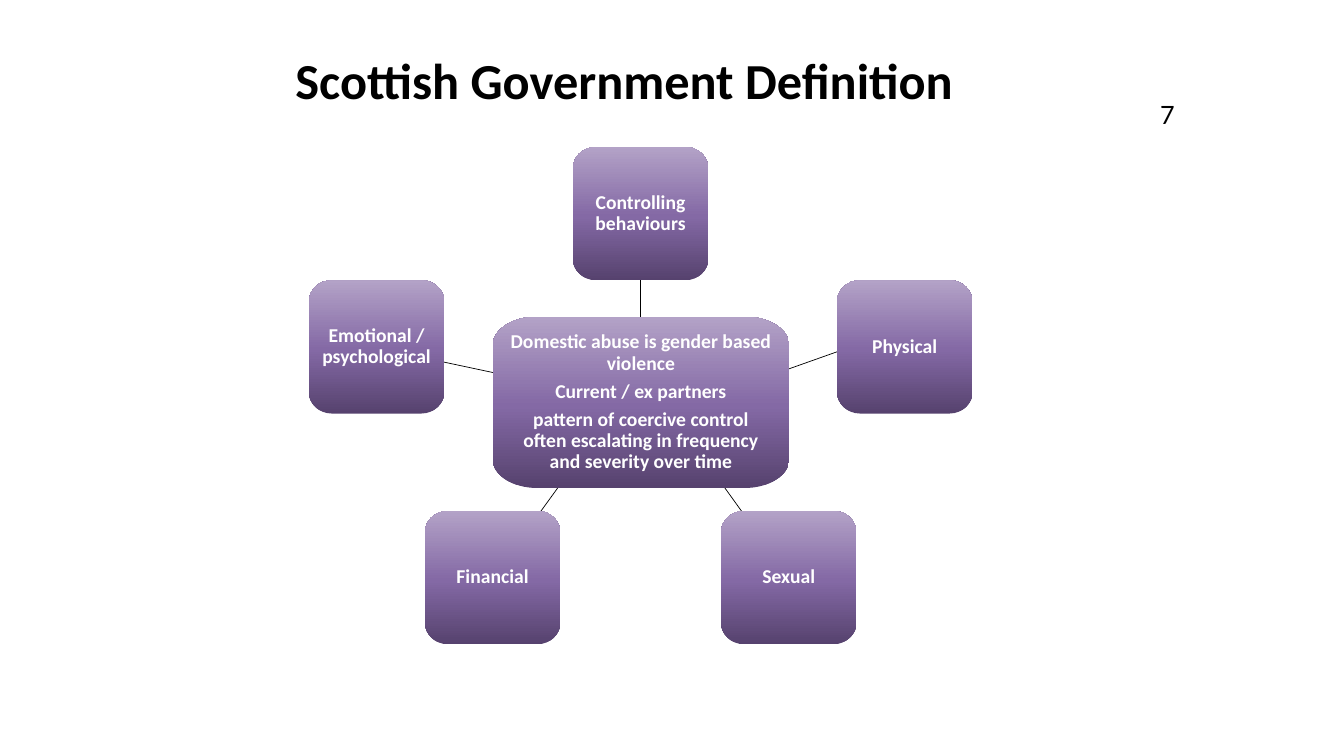
import copy
from dataclasses import dataclass

import lxml.etree
import pptx
import pptx.dml.color
import pptx.enum.shapes
import pptx.enum.text
import pptx.oxml.ns
import pptx.util

Pt = pptx.util.Pt
qn = pptx.oxml.ns.qn


@dataclass(frozen=True)
class Theme:
    ink: str = "000000"
    light: str = "FFFFFF"
    gradient: tuple[tuple[float, str], ...] = (
        (0, "56426E"), (0.48, "8469A5"), (1, "B3A2C7"))
    font: str = "Calibri"
    number_font: str = "Lato"
    title_size: float = 36
    number_size: float = 18
    box_size: float = 14
    line_width: float = 0.5


@dataclass(frozen=True)
class Box:
    lines: tuple[str, ...]
    left: float
    top: float
    width: float = 97
    height: float = 95.2
    corner_x: float = 16.4
    corner_y: float = 15.9
    inset: float = 6.5


@dataclass(frozen=True)
class Spoke:
    x1: float
    y1: float
    x2: float
    y2: float


THEME = Theme()
CURVE = 0.55

HUB = Box(
    ("Domestic abuse is gender based violence",
     "Current / ex partners",
     "pattern of coercive control often escalating in frequency "
     "and severity over time"),
    352, 226.2, 211.7, 122.4, 31.8, 20.4, 12.4)

NODES = (
    Box(("Controlling behaviours",), 409.1, 105),
    Box(("Physical",), 597.8, 200.2),
    Box(("Sexual",), 514.9, 365),
    Box(("Financial",), 303.4, 365),
    Box(("Emotional / psychological",), 220.5, 200.2),
)

SPOKES = (
    Spoke(269, 248.4, 387.4, 273.6),
    Spoke(457.6, 148.3, 457.6, 247.7),
    Spoke(646.6, 234, 535, 273.6),
    Spoke(563.8, 412.6, 479.5, 295.2),
    Spoke(352, 412.6, 434.9, 298.1),
)


def rgb(value: str) -> pptx.dml.color.RGBColor:
    return pptx.dml.color.RGBColor.from_string(value)


def format_runs(tf, font: str, size: float, color: str, bold: bool) -> None:
    for p in tf.paragraphs:
        for r in p.runs:
            r.font.name = font
            r.font.size = Pt(size)
            r.font.bold = bold
            r.font.color.rgb = rgb(color)


def outline(box: Box) -> list[tuple[int, int]]:
    left, top = box.left, box.top
    right, bottom = left + box.width, top + box.height
    rx, ry = box.corner_x, box.corner_y
    points = (
        (left, top + ry), (left + rx, top),
        (right - rx, top), (right, top + ry),
        (right, bottom - ry), (right - rx, bottom),
        (left + rx, bottom), (left, bottom - ry))
    return [(Pt(x), Pt(y)) for x, y in points]


def round_corners(sp) -> None:
    w, h = sp.width, sp.height
    ends = list(sp._element.spPr.iter(qn("a:pt")))
    corners = ((0, 0), (w, 0), (w, h), (0, h))
    for corner, start, end in zip(corners, ends[0::2], ends[1::2]):
        segment = end.getparent()
        segment.tag = qn("a:cubicBezTo")
        for index, anchor in enumerate((start, end)):
            pt = lxml.etree.Element(qn("a:pt"))
            for axis, target in zip("xy", corner):
                value = int(anchor.get(axis))
                pt.set(axis, str(round(value + CURVE * (target - value))))
            segment.insert(index, pt)


def fill_gradient(sp) -> None:
    sp.fill.gradient()
    sp.fill.gradient_angle = 90
    stops = sp._element.spPr.find(".//" + qn("a:gsLst"))
    stops.append(copy.deepcopy(stops[-1]))
    for stop, (position, color) in zip(sp.fill.gradient_stops, THEME.gradient):
        stop.position = position
        stop.color.rgb = rgb(color)


def draw_box(s, box: Box) -> None:
    start, *rest = outline(box)
    builder = s.shapes.build_freeform(*start, scale=1.0)
    builder.add_line_segments(rest, close=True)
    sp = builder.convert_to_shape()
    round_corners(sp)
    sp.shadow.inherit = False
    sp.line.fill.background()
    fill_gradient(sp)
    tf = sp.text_frame
    tf.word_wrap = True
    tf.vertical_anchor = pptx.enum.text.MSO_ANCHOR.MIDDLE
    tf.margin_left = tf.margin_right = Pt(box.inset)
    tf.margin_top = tf.margin_bottom = Pt(box.inset)
    tf.text = "\n".join(box.lines)
    for p in tf.paragraphs:
        p.alignment = pptx.enum.text.PP_ALIGN.CENTER
        p.line_spacing = 0.9
        p.space_after = Pt(4.9)
    format_runs(tf, THEME.font, THEME.box_size, THEME.light, True)


def draw_spoke(s, spoke: Spoke) -> None:
    line = s.shapes.add_connector(
        pptx.enum.shapes.MSO_CONNECTOR.STRAIGHT,
        Pt(spoke.x1), Pt(spoke.y1), Pt(spoke.x2), Pt(spoke.y2))
    line.line.color.rgb = rgb(THEME.ink)
    line.line.width = Pt(THEME.line_width)
    lxml.etree.SubElement(line._element.spPr, qn("a:effectLst"))


def draw_title(s, text: str) -> None:
    sp = s.shapes.title
    sp.left, sp.top, sp.width, sp.height = Pt(203.8), Pt(31.4), Pt(507.6), Pt(51.1)
    tf = sp.text_frame
    tf.text = text
    tf.word_wrap = True
    tf.auto_size = pptx.enum.text.MSO_AUTO_SIZE.NONE
    tf.vertical_anchor = pptx.enum.text.MSO_ANCHOR.TOP
    tf.paragraphs[0].alignment = pptx.enum.text.PP_ALIGN.LEFT
    format_runs(tf, THEME.font, THEME.title_size, THEME.ink, True)


def draw_number(s, text: str) -> None:
    sp = s.shapes.add_textbox(Pt(677.5), Pt(67.4), Pt(216), Pt(28.8))
    tf = sp.text_frame
    tf.word_wrap = True
    tf.margin_left = Pt(151.2)
    tf.text = text
    format_runs(tf, THEME.number_font, THEME.number_size, THEME.ink, False)


def main() -> None:
    prs = pptx.Presentation()
    prs.slide_width, prs.slide_height = Pt(960), Pt(540)
    s = prs.slides.add_slide(prs.slide_layouts.get_by_name("Title Only"))
    draw_title(s, "Scottish Government Definition")
    for spoke in SPOKES:
        draw_spoke(s, spoke)
    for box in (HUB, *NODES):
        draw_box(s, box)
    draw_number(s, "7")
    prs.save("out.pptx")


if __name__ == "__main__":
    main()
